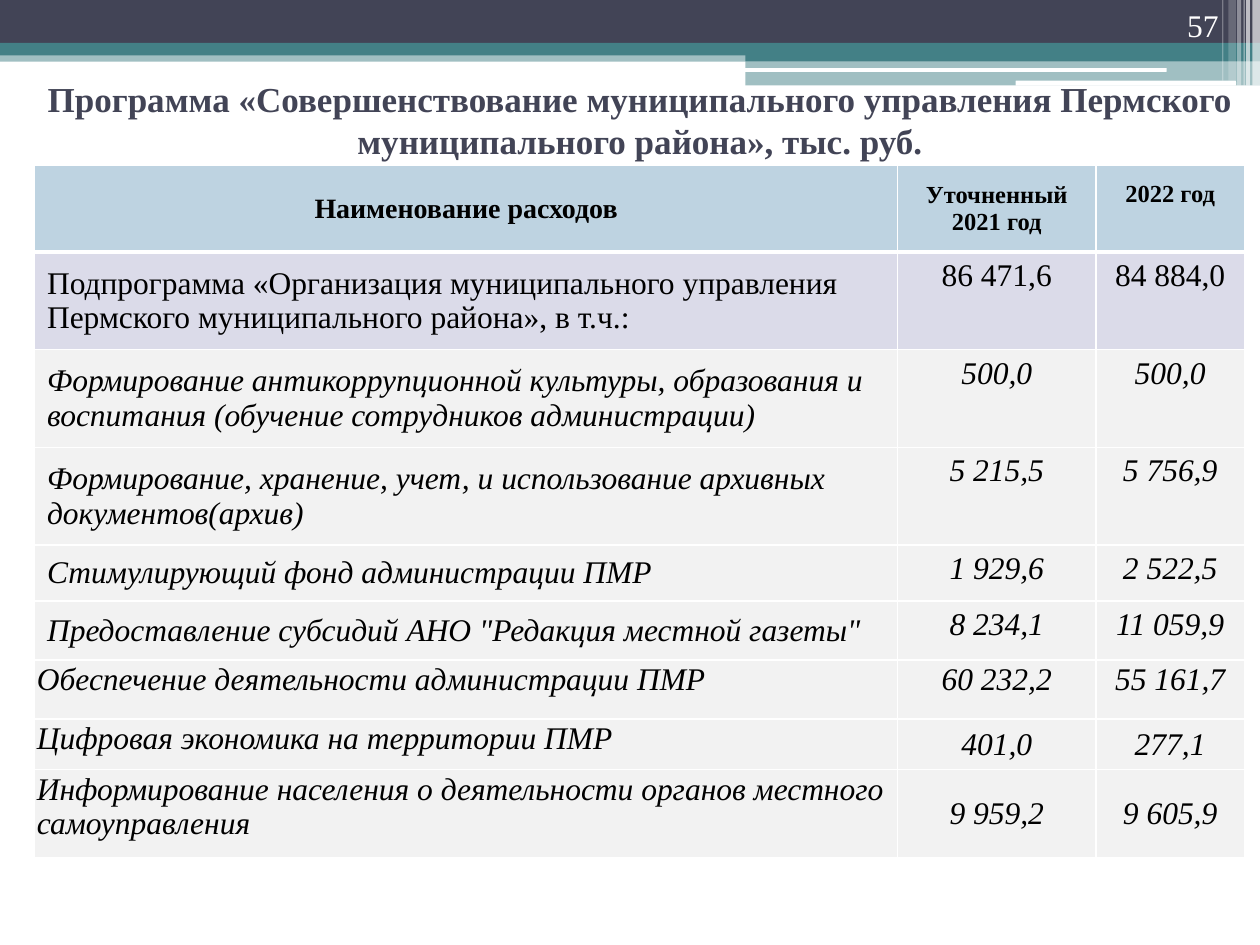
from pptx import Presentation
from pptx.dml.color import RGBColor
from pptx.enum.shapes import MSO_SHAPE
from pptx.enum.text import MSO_ANCHOR, PP_ALIGN
from pptx.oxml.ns import qn
from pptx.util import Pt
from lxml import etree

RECT, ROUNDED = MSO_SHAPE.RECTANGLE, MSO_SHAPE.ROUNDED_RECTANGLE
TOP, MIDDLE, BOTTOM = MSO_ANCHOR.TOP, MSO_ANCHOR.MIDDLE, MSO_ANCHOR.BOTTOM
LEFT, CENTER, RIGHT = PP_ALIGN.LEFT, PP_ALIGN.CENTER, PP_ALIGN.RIGHT

FONT = "Times New Roman"
NAVY, TEAL, WHITE, BLACK = "424456", "438086", "FFFFFF", "000000"
HEADER_FILL, SUBPROGRAM_FILL, ITEM_FILL = "BED3E1", "DBDBE9", "F2F2F2"

# Left, top, width, height, colour, opacity in percent
BANDS = [
    (0, 28.8, 720, 6.5, TEAL, 50),
    (0, 0, 720, 24.5, NAVY, 100),
    (0, 24.5, 720, 7.2, TEAL, 100),
    (426, 28.1, 294, 6.8, TEAL, 100),
    (426, 34.9, 294, 14, TEAL, 50),
]
HIGHLIGHTS = [(425.5, 38.9, 241.2, 2.2), (580.3, 46.1, 126, 2.9)]
# Left, width, height, opacity in percent
STRIPES = [
    (715.7, 4.3, 49, 65), (712.1, 2.2, 49, 65), (710.6, 0.7, 49, 60),
    (707, 2.2, 49, 40), (702, 4.3, 46.1, 20), (698.4, 0.7, 46.1, 30),
]

COLUMN_WIDTHS = [493.3, 113.2, 85]
ROW_HEIGHTS = [49.5, 55.8, 55.8, 55.8, 32, 33.8, 33.8, 28.8, 50.5]
EXPENSES = [
    ("Наименование расходов", "Уточненный 2021 год", "2022 год"),
    ("Подпрограмма «Организация муниципального управления Пермского "
     "муниципального района», в т.ч.:", "86 471,6", "84 884,0"),
    ("Формирование антикоррупционной культуры, образования и воспитания "
     "(обучение сотрудников администрации)", "500,0", "500,0"),
    ("Формирование, хранение, учет, и использование архивных "
     "документов(архив)", "5 215,5", "5 756,9"),
    ("Стимулирующий фонд администрации ПМР", "1 929,6", "2 522,5"),
    ('Предоставление субсидий АНО "Редакция местной газеты"',
     "8 234,1", "11 059,9"),
    ("Обеспечение деятельности администрации ПМР", "60 232,2", "55 161,7"),
    ("Цифровая экономика на территории ПМР", "401,0", "277,1"),
    ("Информирование населения о деятельности органов местного "
     "самоуправления", "9 959,2", "9 605,9"),
]


def rgb(color):
    return RGBColor.from_string(color)


def add_bar(slide, kind, left, top, width, height, color, opacity=100):
    bar = slide.shapes.add_shape(kind, Pt(left), Pt(top), Pt(width), Pt(height))
    bar.shadow.inherit = False
    bar.line.fill.background()
    bar.fill.solid()
    bar.fill.fore_color.rgb = rgb(color)
    if opacity < 100:
        fill_color = bar.fill._xPr.find(qn("a:solidFill"))[0]
        etree.SubElement(fill_color, qn("a:alpha"), val=str(opacity * 1000))


def write(frame, text, align, color, **font_format):
    paragraph = frame.paragraphs[0]
    paragraph.alignment = align
    run = paragraph.add_run()
    run.text = text
    run.font.name = FONT
    run.font.color.rgb = rgb(color)
    for name, value in font_format.items():
        setattr(run.font, name, value)


def add_text(slide, left, top, width, height, text, align, anchor, color, **font_format):
    frame = slide.shapes.add_textbox(Pt(left), Pt(top), Pt(width), Pt(height)).text_frame
    frame.word_wrap = True
    frame.vertical_anchor = anchor
    write(frame, text, align, color, **font_format)


def set_borders(cell, widths):
    properties = cell._tc.get_or_add_tcPr()
    for side, width in widths.items():
        line = etree.SubElement(properties, qn(f"a:ln{side}"), w=str(Pt(width)))
        fill = etree.SubElement(line, qn("a:solidFill"))
        etree.SubElement(fill, qn("a:srgbClr"), val=WHITE)


def cell_layout(row, column):
    """Anchor and margins of a cell."""
    side, edge = (7.2, 3.6) if row < 6 else (1.4, 1.4)
    layout = {"margin_left": Pt(side), "margin_right": Pt(side),
              "margin_top": Pt(edge), "margin_bottom": Pt(edge)}
    if row == 0:
        centered = column < 2
        if not centered:
            layout["margin_top"] = Pt(8.5)
    elif column == 0:
        centered = row < 6
    else:
        centered = row > 6
    layout["vertical_anchor"] = MIDDLE if centered else TOP
    return layout


def fill_cell(cell, row, column, text):
    set_borders(cell, {"L": 1, "R": 1, "T": 3 if row == 1 else 1,
                       "B": 3 if row == 0 else 1})
    cell.fill.solid()
    cell.fill.fore_color.rgb = rgb({0: HEADER_FILL, 1: SUBPROGRAM_FILL}.get(row, ITEM_FILL))
    for name, value in cell_layout(row, column).items():
        setattr(cell, name, value)
    if row == 0:
        size = 16 if column == 0 else 14
    else:
        size = 18
    align = LEFT if row and column == 0 else CENTER
    write(cell.text_frame, text, align, BLACK,
          size=Pt(size), bold=row == 0, italic=row > 1)


def add_expense_table(slide):
    table = slide.shapes.add_table(
        len(ROW_HEIGHTS), len(COLUMN_WIDTHS), Pt(19.7), Pt(94.5),
        Pt(sum(COLUMN_WIDTHS)), Pt(sum(ROW_HEIGHTS))).table
    table.first_row = table.horz_banding = False
    for column, width in zip(table.columns, COLUMN_WIDTHS):
        column.width = Pt(width)
    for row, height in zip(table.rows, ROW_HEIGHTS):
        row.height = Pt(height)
    for r, expense in enumerate(EXPENSES):
        for c, text in enumerate(expense):
            fill_cell(table.cell(r, c), r, c, text)


def main():
    presentation = Presentation()
    presentation.slide_width, presentation.slide_height = Pt(720), Pt(540)
    slide = presentation.slides.add_slide(presentation.slide_layouts[6])

    # Header decoration
    for band in BANDS:
        add_bar(slide, RECT, *band)
    for highlight in HIGHLIGHTS:
        add_bar(slide, ROUNDED, *highlight, WHITE)
    for left, width, height, opacity in STRIPES:
        add_bar(slide, RECT, left, 0, width, height, WHITE, opacity)

    # Title, expenses and page number
    add_text(slide, 11.5, 37.4, 708.5, 62,
             "Программа «Совершенствование муниципального управления Пермского "
             "муниципального района», тыс. руб.",
             CENTER, MIDDLE, NAVY, size=Pt(20), bold=True)
    add_expense_table(slide)
    add_text(slide, 643.7, 0, 59.8, 28.8, "57", RIGHT, BOTTOM, WHITE, size=Pt(18))

    presentation.save("out.pptx")


if __name__ == "__main__":
    main()
